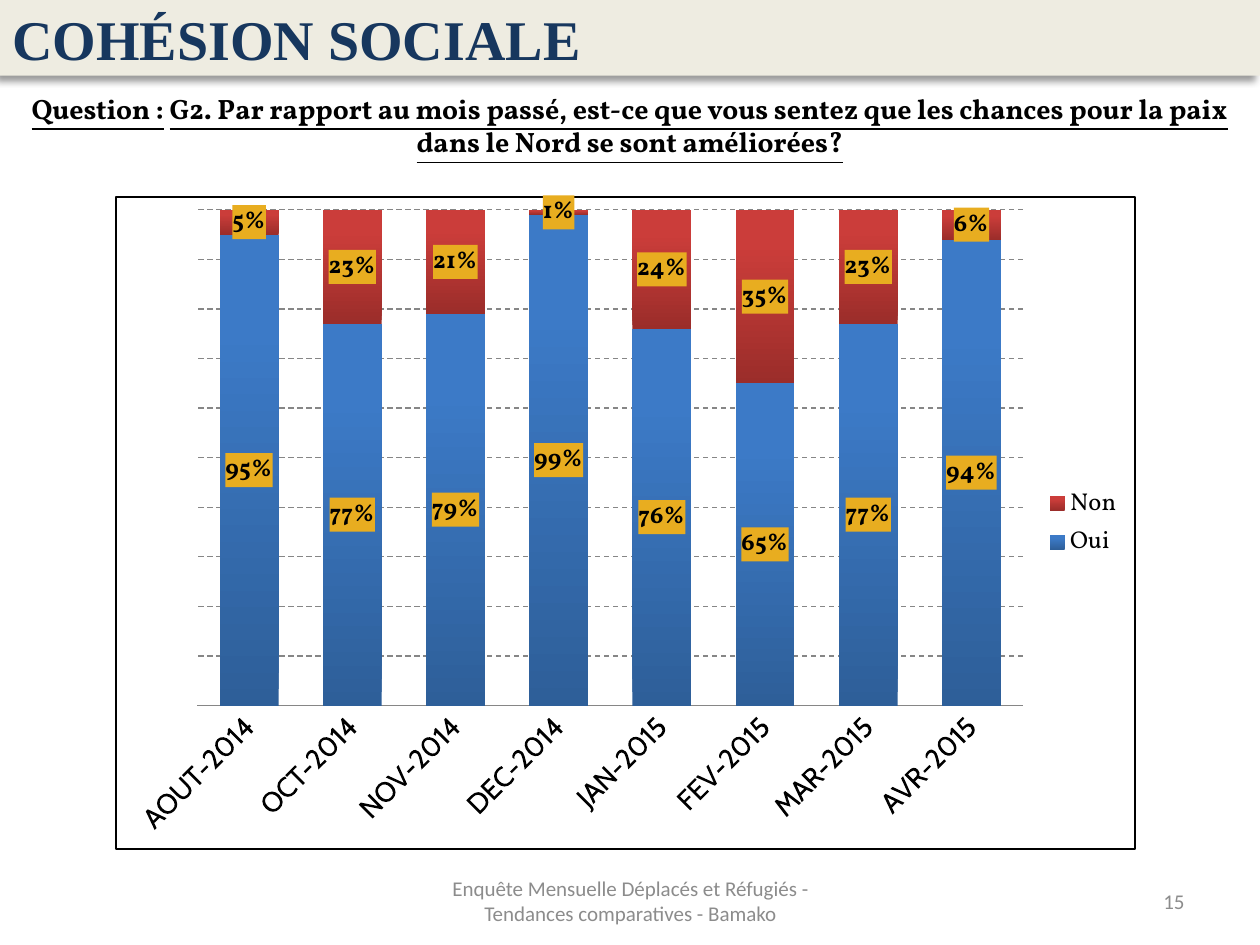
from pptx import Presentation, oxml
from pptx import util as u
from pptx.chart import data
from pptx.dml.color import RGBColor
from pptx.enum import chart as ch, dml, shapes, text
from pptx.oxml import ns

BLACK = RGBColor(0x00, 0x00, 0x00)
GREY = RGBColor(0x8C, 0x8C, 0x8C)
GRID = RGBColor(0x86, 0x86, 0x86)
BEIGE = RGBColor(0xEE, 0xEC, 0xE1)
NAVY = RGBColor(0x17, 0x37, 0x5E)
AMBER = RGBColor(0xE8, 0xAD, 0x20)
BLUES = RGBColor(0x2E, 0x5F, 0x99), RGBColor(0x3C, 0x7A, 0xC7)
REDS = RGBColor(0x9B, 0x2D, 0x2A), RGBColor(0xCB, 0x3D, 0x3A)

MONTHS = ["AOUT-2014", "OCT-2014", "NOV-2014", "DEC-2014",
          "JAN-2015", "FEV-2015", "MAR-2015", "AVR-2015"]
OUI = [0.95, 0.77, 0.79, 0.99, 0.76, 0.65, 0.77, 0.94]
NON = [round(1 - share, 2) for share in OUI]

FOOTER = {"name": "Calibri", "size": u.Pt(12), "color": GREY}
TITLE = {"name": "Times New Roman", "size": u.Pt(32), "bold": True, "color": NAVY}
QUESTION = {"name": "Vollkorn", "size": u.Pt(16), "bold": True, "color": BLACK}
BASE = {"name": "Calibri", "size": u.Pt(10), "color": BLACK}
MONTH = {"name": "Cabin", "size": u.Pt(16), "color": BLACK}
LEGEND = {"name": "Vollkorn", "size": u.Pt(14), "color": BLACK}
LABEL = {**LEGEND, "bold": True}


def xml(tag, inner):
    return oxml.parse_xml(f"<{tag} {ns.nsdecls('a', 'c')}>{inner}</{tag}>")


def solid(color):
    return f'<a:solidFill><a:srgbClr val="{color}"/></a:solidFill>'


class SurveySlide:
    """Holds the text style and the current slide, and adds each kind of element."""

    def __init__(self, deck):
        self.slide = deck.slides.add_slide(deck.slide_layouts[6])

    def style(self, font, look):
        for key, value in look.items():
            if key == "color":
                font.color.rgb = value
            else:
                setattr(font, key, value)

    def fill_text(self, frame, runs, look, align):
        frame.word_wrap = True
        frame.vertical_anchor = text.MSO_ANCHOR.MIDDLE
        paragraph = frame.paragraphs[0]
        paragraph.alignment = align
        for words, underline in runs:
            run = paragraph.add_run()
            run.text = words
            self.style(run.font, {**look, "underline": underline})

    def text(self, place, runs, look, align):
        box = self.slide.shapes.add_textbox(*map(u.Inches, place))
        self.fill_text(box.text_frame, runs, look, align)

    def banner(self, place, words, look, fill):
        band = self.slide.shapes.add_shape(
            shapes.MSO_SHAPE.RECTANGLE, *map(u.Inches, place))
        band.fill.solid()
        band.fill.fore_color.rgb = fill
        band.line.fill.background()
        band.shadow.inherit = False
        effects = band.element.spPr.find(ns.qn("a:effectLst"))
        effects.append(xml("a:outerShdw", '<a:srgbClr val="000000"><a:alpha val="40000"/></a:srgbClr>'))
        for key, value in {"blurRad": u.Pt(4), "dist": u.Pt(4), "dir": 135 * 60000}.items():
            effects[0].set(key, str(int(value)))
        self.fill_text(band.text_frame, [(words, False)], look, text.PP_ALIGN.LEFT)

    def chart(self, place, months, answers):
        table = data.CategoryChartData(number_format="0%")
        table.categories = months
        for name, shares, _ in answers:
            table.add_series(name, shares)
        chart = self.slide.shapes.add_chart(
            ch.XL_CHART_TYPE.COLUMN_STACKED_100, *map(u.Inches, place), table).chart
        self.style(chart.font, BASE)
        chart.has_title = False
        chart.has_legend = True
        chart.legend.position = ch.XL_LEGEND_POSITION.RIGHT
        chart.legend.include_in_layout = False
        self.style(chart.legend.font, LEGEND)
        self.axes(chart)
        plot = chart.plots[0]
        for key, value in {"gap_width": 75, "overlap": 100, "vary_by_categories": False}.items():
            setattr(plot, key, value)
        for series, (_, _, tones) in zip(plot.series, answers):
            self.bars(series, tones)
        self.frame(chart)

    def axes(self, chart):
        months, shares = chart.category_axis, chart.value_axis
        months.major_tick_mark = ch.XL_TICK_MARK.NONE
        months.format.line.color.rgb = GRID
        self.style(months.tick_labels.font, MONTH)
        for body in chart.element.xpath(".//c:catAx/c:txPr/a:bodyPr"):
            body.set("rot", str(-45 * 60000))
        for key, value in {"minimum_scale": 0, "maximum_scale": 1, "major_unit": 0.1,
                           "has_major_gridlines": True, "visible": False}.items():
            setattr(shares, key, value)
        line = shares.major_gridlines.format.line
        line.color.rgb = GRID
        line.width = u.Pt(0.75)
        line.dash_style = dml.MSO_LINE.DASH

    def bars(self, series, tones):
        fill = series.format.fill
        fill.gradient()
        fill.gradient_angle = 90
        for stop, tone, position in zip(fill.gradient_stops, tones, (0, 0.8)):
            stop.color.rgb = tone
            stop.position = position
        labels = series.data_labels
        for key, value in {"show_value": True, "number_format": "0%",
                           "number_format_is_linked": False,
                           "position": ch.XL_LABEL_POSITION.CENTER}.items():
            setattr(labels, key, value)
        self.style(labels.font, LABEL)

    def frame(self, chart):
        for label_text in chart.element.xpath(".//c:dLbls/c:txPr"):
            label_text.addprevious(xml("c:spPr", solid(AMBER)))
        border = f'<a:noFill/><a:ln w="{u.Pt(1.5)}">{solid(BLACK)}</a:ln>'
        chart.element.xpath("c:txPr")[0].addprevious(xml("c:spPr", border))
        area = chart.element.xpath(".//c:plotArea")[0]
        for layout in area.xpath("c:layout"):
            area.remove(layout)
        inside = {"layoutTarget": "inner", "xMode": "edge", "yMode": "edge",
                  "x": 0.08, "y": 0.02, "w": 0.81, "h": 0.76}
        values = "".join(f'<c:{key} val="{value}"/>' for key, value in inside.items())
        area.insert(0, xml("c:layout", f"<c:manualLayout>{values}</c:manualLayout>"))


def main():
    deck = Presentation()
    deck.slide_width, deck.slide_height = u.Inches(10), u.Inches(7.5)
    page = SurveySlide(deck)
    page.text((7.17, 6.95, 2.33, 0.4), [("15", False)], FOOTER, text.PP_ALIGN.RIGHT)
    page.text((3.42, 6.95, 3.17, 0.4),
              [("Enquête Mensuelle Déplacés et Réfugiés - Tendances comparatives - Bamako", False)],
              FOOTER, text.PP_ALIGN.CENTER)
    page.banner((0, 0, 10, 0.6), "COHÉSION SOCIALE", TITLE, BEIGE)
    page.text((0, 0.67, 10, 0.64),
              [("Question :", True), (" ", False),
               ("G2. Par rapport au mois passé, est-ce que vous sentez que les chances "
                "pour la paix dans le Nord se sont améliorées?", True)],
              QUESTION, text.PP_ALIGN.CENTER)
    page.chart((0.91, 1.55, 8.11, 5.2), MONTHS, [("Oui", OUI, BLUES), ("Non", NON, REDS)])
    deck.save("out.pptx")


if __name__ == "__main__":
    main()
